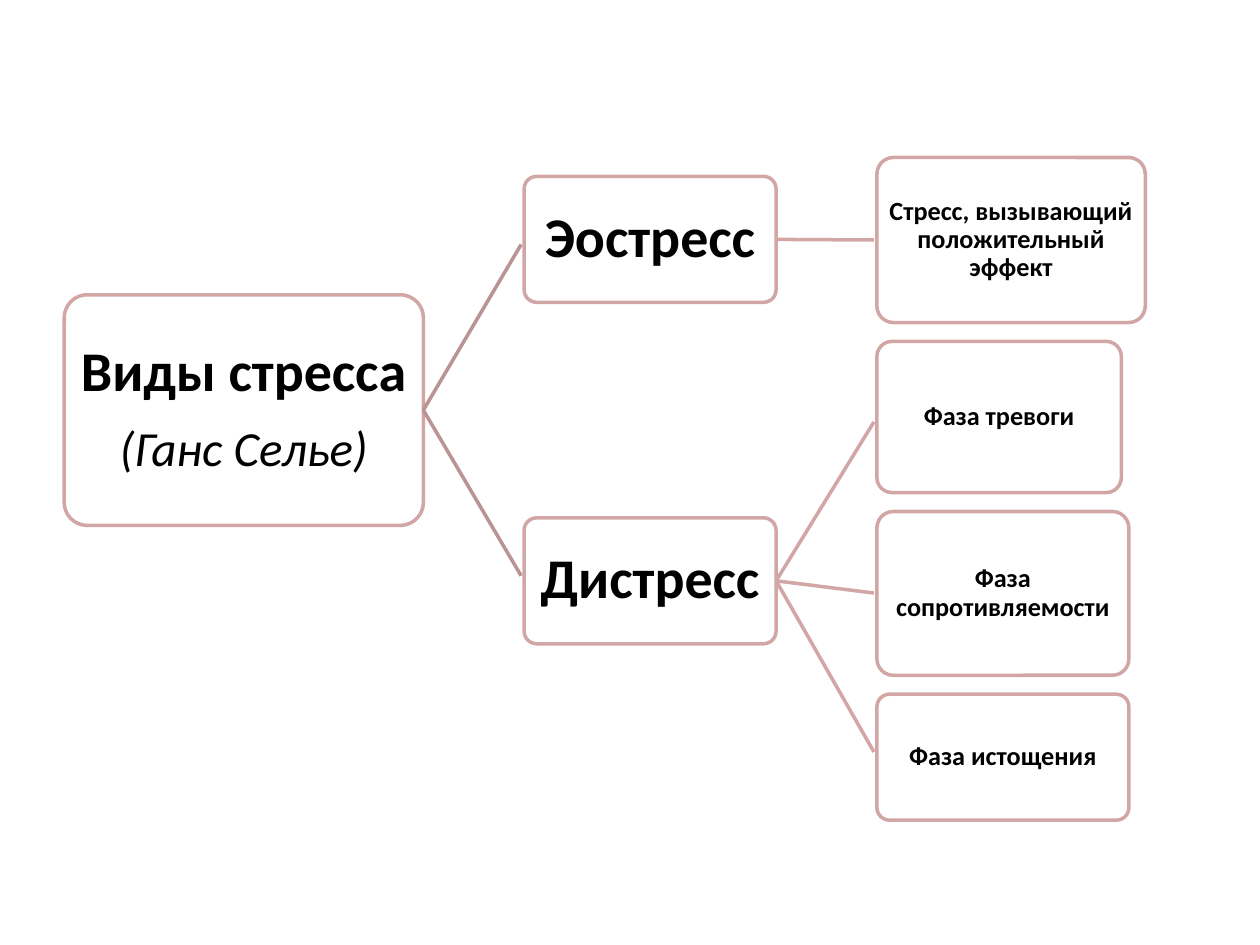
from lxml import etree
from pptx import Presentation
from pptx.dml.color import RGBColor
from pptx.enum.shapes import MSO_CONNECTOR, MSO_SHAPE
from pptx.enum.text import MSO_ANCHOR, PP_ALIGN
from pptx.oxml.ns import qn
from pptx.util import Inches, Pt

ROUNDED = MSO_SHAPE.ROUNDED_RECTANGLE
STRAIGHT = MSO_CONNECTOR.STRAIGHT
MIDDLE = MSO_ANCHOR.MIDDLE
CENTER = PP_ALIGN.CENTER

WHITE = RGBColor(0xFF, 0xFF, 0xFF)
BLACK = RGBColor(0x00, 0x00, 0x00)
ROSE = RGBColor(0xD3, 0xA6, 0xA6)
DARK_ROSE = RGBColor(0xBA, 0x93, 0x93)

FONT = "Calibri"
LINE_WIDTH = Pt(2)
LINK_REACH = 0.97  # links stop just short of the child box

# Each level: left edge, text inset, colour of links to its children
LEVELS = [(0.51, 0.02, DARK_ROSE), (4.16, 0.02, ROSE), (6.96, 0.01, None)]

# key: level, parent, (top, width, height), lines of (text, size, bold, italic)
NODES = {
    "root": (0, None, (2.34, 2.85, 1.83),
             [("Виды стресса", 32, True, False),
              ("(Ганс Селье)", 28, False, True)]),
    "eustress": (1, "root", (1.4, 2, 1), [("Эостресс", 32, True, False)]),
    "effect": (2, "eustress", (1.25, 2.13, 1.31),
               [("Стресс, вызывающий положительный эффект", 15, True, False)]),
    "distress": (1, "root", (4.11, 2, 1), [("Дистресс", 32, True, False)]),
    "alarm": (2, "distress", (2.71, 1.94, 1.2),
              [("Фаза тревоги", 15, True, False)]),
    "resistance": (2, "distress", (4.06, 2, 1.3),
                   [("Фаза сопротивляемости", 15, True, False)]),
    "exhaustion": (2, "distress", (5.51, 2, 1),
                   [("Фаза истощения", 15, True, False)]),
}


def add_box(slide, level, bounds, lines):
    left, inset, _ = LEVELS[level]
    top, width, height = bounds
    box = slide.shapes.add_shape(
        ROUNDED, Inches(left), Inches(top), Inches(width), Inches(height))
    box.adjustments[0] = 0.1
    box.shadow.inherit = False
    box.fill.solid()
    box.fill.fore_color.rgb = WHITE
    box.line.color.rgb = ROSE
    box.line.width = LINE_WIDTH

    frame = box.text_frame
    frame.word_wrap = True
    frame.vertical_anchor = MIDDLE
    frame.margin_left = frame.margin_right = Inches(inset)
    frame.margin_top = frame.margin_bottom = Inches(inset)
    frame.text = "\n".join(line[0] for line in lines)
    for paragraph, (_, size, bold, italic) in zip(frame.paragraphs, lines):
        paragraph.alignment = CENTER
        paragraph.line_spacing = 0.9
        paragraph.space_after = Pt(0.35 * size)
        font = paragraph.runs[0].font
        font.name, font.size = FONT, Pt(size)
        font.bold, font.italic = bold, italic
        font.color.rgb = BLACK
    return box


def add_link(slide, parent, child, color):
    """Draw a line from the parent's right edge towards the child's left edge."""
    start_x = parent.left + parent.width
    start_y = parent.top + parent.height // 2
    child_y = child.top + child.height // 2
    link = slide.shapes.add_connector(
        STRAIGHT, start_x, start_y,
        start_x + round(LINK_REACH * (child.left - start_x)),
        start_y + round(LINK_REACH * (child_y - start_y)))
    link.line.color.rgb = color
    link.line.width = LINE_WIDTH
    etree.SubElement(link._element.spPr, qn("a:effectLst"))


def main():
    deck = Presentation()
    deck.slide_width, deck.slide_height = Inches(10), Inches(7.5)
    slide = deck.slides.add_slide(deck.slide_layouts[6])
    boxes = {}
    for key, (level, parent, bounds, lines) in NODES.items():
        boxes[key] = add_box(slide, level, bounds, lines)
        if parent:
            add_link(slide, boxes[parent], boxes[key], LEVELS[level - 1][2])
    deck.save("out.pptx")


if __name__ == "__main__":
    main()
